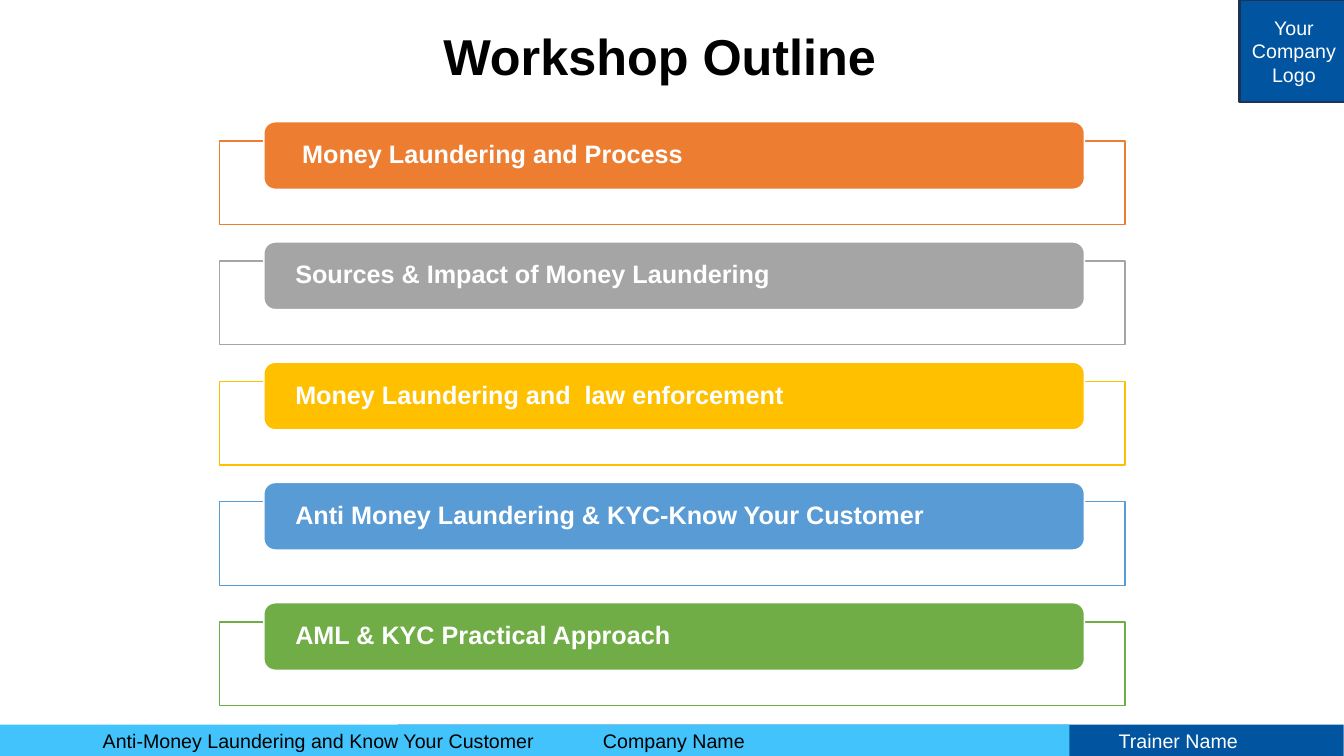
import pptx
import pptx.util
import pptx.dml.color
import pptx.enum.shapes
import pptx.enum.text
import pptx.oxml.ns
import lxml.etree

COLOURS = {
    "white": "FFFFFF", "black": "000000", "navy": "01549F", "sky": "42C3FB",
    "edge": "1E3256", "orange": "ED7D31", "grey": "A5A5A5", "gold": "FFC000",
    "blue": "599BD5", "green": "70AD47",
}
TOPICS = [
    (" Money Laundering and Process", "orange"),
    ("Sources & Impact of Money Laundering", "grey"),
    ("Money Laundering and  law enforcement", "gold"),
    ("Anti Money Laundering & KYC-Know Your Customer", "blue"),
    ("AML & KYC Practical Approach", "green"),
]
ALIGN = pptx.enum.text.PP_ALIGN
SHAPES = pptx.enum.shapes.MSO_SHAPE
Cm = pptx.util.Cm


class OutlinePage:
    """Draws styled elements on one page; all lengths are in centimetres."""

    font_name = "Arial"

    def __init__(self, page):
        self.page = page

    def colour(self, name):
        return pptx.dml.color.RGBColor.from_string(COLOURS[name])

    def set_text(self, shape, text, size, colour, align=ALIGN.LEFT, bold=False,
                 spacing=1.0, insets=(0.25, 0.13, 0.25, 0.13)):
        frame = shape.text_frame
        frame.word_wrap = True
        frame.auto_size = pptx.enum.text.MSO_AUTO_SIZE.NONE
        frame.vertical_anchor = pptx.enum.text.MSO_ANCHOR.MIDDLE
        (frame.margin_left, frame.margin_top,
         frame.margin_right, frame.margin_bottom) = map(Cm, insets)
        para = frame.paragraphs[0]
        para.text = text
        para.alignment = align
        para.line_spacing = spacing
        para.font.name = self.font_name
        para.font.size = pptx.util.Pt(size)
        para.font.bold = bold
        para.font.color.rgb = self.colour(colour)

    def title(self, text, left, top, width, height):
        shape = self.page.shapes.title
        shape.left, shape.top = Cm(left), Cm(top)
        shape.width, shape.height = Cm(width), Cm(height)
        self.set_text(shape, text, 36, "black", ALIGN.CENTER, True, 0.9,
                      (0, 0.13, 0.62, 0.13))

    def block(self, left, top, width, height, fill, line=None, line_width=1,
              kind=SHAPES.RECTANGLE, opacity=100):
        shape = self.page.shapes.add_shape(
            kind, Cm(left), Cm(top), Cm(width), Cm(height))
        shape.shadow.inherit = False
        shape.fill.solid()
        shape.fill.fore_color.rgb = self.colour(fill)
        if opacity < 100:
            tint = next(shape.element.spPr.iter(pptx.oxml.ns.qn("a:srgbClr")))
            lxml.etree.SubElement(tint, pptx.oxml.ns.qn("a:alpha"),
                                  val=str(opacity * 1000))
        if line:
            shape.line.color.rgb = self.colour(line)
            shape.line.width = pptx.util.Pt(line_width)
        else:
            shape.line.fill.background()
        return shape

    def label(self, text, left, top, width, height, colour, align=ALIGN.LEFT):
        box = self.page.shapes.add_textbox(
            Cm(left), Cm(top), Cm(width), Cm(height))
        self.set_text(box, text, 14, colour, align)

    def topic(self, text, colour, top):
        self.block(5.54, top + 0.48, 22.81, 2.11, "white", colour, opacity=90)
        bar = self.block(6.65, top, 20.68, 1.7, colour, "white",
                         kind=SHAPES.ROUNDED_RECTANGLE)
        self.set_text(bar, text, 18, "white", bold=True, spacing=0.9,
                      insets=(0.71, 0, 0.71, 0))


def main():
    deck = pptx.Presentation()
    deck.slide_width, deck.slide_height = Cm(33.87), Cm(19.05)
    outline = OutlinePage(deck.slides.add_slide(deck.slide_layouts[5]))

    outline.block(10.03, 18.26, 23.83, 0.79, "navy")
    outline.block(0, 18.26, 26.95, 0.79, "sky")
    outline.label("Anti-Money Laundering and Know Your Customer",
                  2.34, 18.24, 11.43, 0.86, "black")
    outline.label("Company Name", 13.86, 18.24, 6.25, 0.86, "black",
                  ALIGN.CENTER)
    outline.label("Trainer Name", 27.94, 18.24, 5.9, 0.86, "white")
    logo = outline.block(31.24, 0, 2.74, 2.57, "navy", "edge", 2)
    outline.set_text(logo, "Your Company Logo", 14, "white", ALIGN.CENTER)

    outline.title("Workshop Outline", 1.75, 0.69, 30.38, 1.6)
    for index, (text, colour) in enumerate(TOPICS):
        outline.topic(text, colour, 3.07 + 3.03 * index)

    deck.save("out.pptx")


if __name__ == "__main__":
    main()
